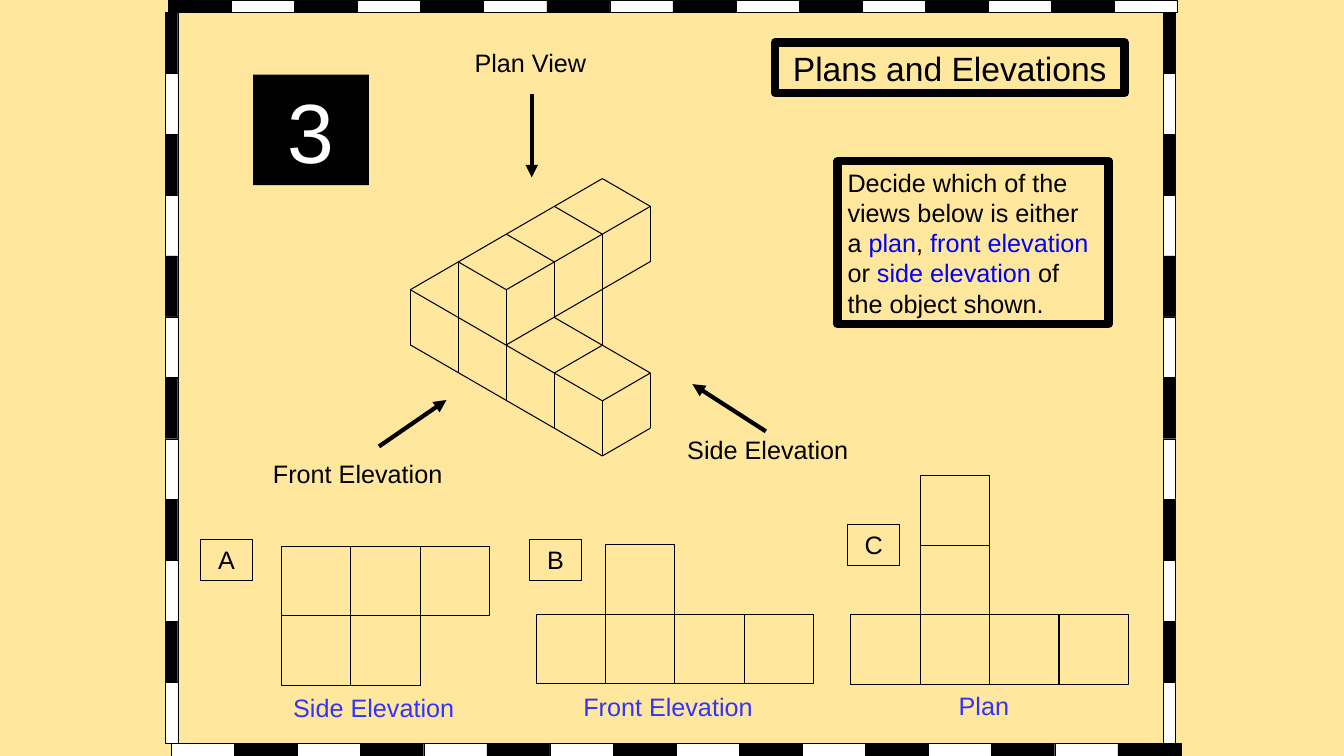
from lxml import etree
from pptx import Presentation
from pptx.dml.color import RGBColor
from pptx.enum.shapes import MSO_CONNECTOR, MSO_SHAPE
from pptx.enum.text import MSO_ANCHOR, MSO_AUTO_SIZE, PP_ALIGN
from pptx.oxml.ns import qn
from pptx.util import Cm, Pt

RECT = MSO_SHAPE.RECTANGLE
STRAIGHT = MSO_CONNECTOR.STRAIGHT
LEFT, CENTER = PP_ALIGN.LEFT, PP_ALIGN.CENTER
MIDDLE = MSO_ANCHOR.MIDDLE
FIXED = MSO_AUTO_SIZE.NONE

COLORS = {
    "sand": "FFE79E",
    "black": "000000",
    "white": "FFFFFF",
    "term": "0000FF",
    "answer": "3333FF",
}
CUBE = 1.75  # side of a square in the flat views

# Solid edges: (along front, along depth, down) at each end, in cubes
EDGES = [
    ((4, 0, 1), (4, 1, 1)), ((4, 0, 1), (0, 0, 1)), ((4, 0, 1), (4, 0, 0)),
    ((4, 0, 0), (4, 1, 0)), ((4, 0, 0), (0, 0, 0)), ((1, 1, 0), (2, 0, 1)),
    ((3, 0, 0), (3, 0, 1)), ((4, 1, 0), (2, 1, 0)), ((1, 1, 1), (1, 4, 1)),
    ((3, 0, 0), (3, 1, 0)), ((0, 1, 0), (1, 0, 1)), ((1, 1, 0), (1, 4, 0)),
    ((1, 1, 0), (0, 1, 0)), ((0, 1, 0), (0, 4, 0)), ((0, 2, 0), (1, 2, 0)),
    ((4, 1, 0), (4, 1, 1)), ((1, 2, 0), (1, 2, 1)), ((0, 3, 0), (1, 3, 0)),
    ((1, 3, 0), (3, 1, 0)), ((0, 4, 0), (1, 4, 0)), ((1, 4, 0), (1, 4, 1)),
    ((0, 0, 0), (0, 0, 1)), ((0, 0, 0), (0, 1, 0)),
]

# Flat views: left, top, (column, row) of each square
VIEWS = [
    (7.09, 13.77, [(0, 0), (1, 0), (2, 0), (0, 1), (1, 1)]),
    (13.51, 13.73, [(1, 0), (0, 1), (1, 1), (2, 1), (3, 1)]),
    (21.44, 11.99, [(1, 0), (1, 1), (0, 2), (1, 2), (2, 2), (3, 2)]),
]
TAGS = [("A", 5.05, 13.59), ("B", 13.34, 13.59), ("C", 21.36, 13.21)]
ANSWERS = [
    ("Side Elevation", 7.14, 17.32),
    ("Front Elevation", 14.45, 17.3),
    ("Plan", 23.91, 17.27),
]
POINTERS = [
    ("Front Elevation", 6.63, 11.43, (9.55, 11.25), (11.25, 10.08)),
    ("Side Elevation", 17.07, 10.82, (19.3, 10.87), (17.45, 9.68)),
    ("Plan View", 11.71, 1.07, (13.4, 2.36), (13.4, 4.47)),
]
TASK = [
    ("Decide which of the views below is either a ", "black"),
    ("plan", "term"),
    (", ", "black"),
    ("front elevation", "term"),
    (" or ", "black"),
    ("side elevation", "term"),
    (" of the object shown.", "black"),
]


def rgb(name):
    return RGBColor.from_string(COLORS[name])


def outline(shape, width):
    shape.line.color.rgb = rgb("black")
    shape.line.width = Pt(width)


def box(slide, x, y, w, h, fill=None, line=0.75):
    shape = slide.shapes.add_shape(RECT, Cm(x), Cm(y), Cm(w), Cm(h))
    shape.shadow.inherit = False
    if fill:
        shape.fill.solid()
        shape.fill.fore_color.rgb = rgb(fill)
    else:
        shape.fill.background()
    outline(shape, line)
    return shape


def write(shape, runs, size=18, align=LEFT):
    """Fill a shape with one paragraph of (text, colour) runs."""
    frame = shape.text_frame
    frame.word_wrap = True
    frame.auto_size = FIXED
    frame.vertical_anchor = MIDDLE
    para = frame.paragraphs[0]
    para.alignment = align
    para.font.name = "Arial"
    para.font.size = Pt(size)
    for text, color in runs:
        run = para.add_run()
        run.text = text
        run.font.color.rgb = rgb(color)


def label(slide, text, x, y, color="black"):
    shape = slide.shapes.add_textbox(Cm(x), Cm(y), Cm(5), Cm(1.02))
    write(shape, [(text, color)])


def line(slide, start, end, width=0.75, arrow=False):
    ends = [Cm(n) for n in (*start, *end)]
    link = slide.shapes.add_connector(STRAIGHT, *ends)
    outline(link, width)
    if arrow:
        etree.SubElement(link.line._ln, qn("a:tailEnd"), type="triangle")
    etree.SubElement(link._element.spPr, qn("a:effectLst"))


def project(point):
    """Isometric place of a cube corner on the slide."""
    front, depth, down = point
    return (10.34 + 1.21 * (front + depth),
            7.3 + 0.7 * (front - depth) + 1.39 * down)


def strip(slide, x, y, w, h, dx, dy, count, shades=("black", "white")):
    """Row or column of border blocks in alternating shades."""
    for i in range(count):
        box(slide, x + i * dx, y + i * dy, w, h, shades[i % 2], 0.25)


def border(slide):
    strip(slide, 4.24, 0, 1.59, 0.31, 1.59, 0, 16)
    strip(slide, 4.32, 18.74, 1.59, 0.31, 1.59, 0, 16, ("white", "black"))
    for x in (4.16, 29.31):
        strip(slide, x, 0.31, 0.32, 1.53, 0, 1.535, 12)


def main():
    deck = Presentation()
    deck.slide_width, deck.slide_height = Cm(33.87), Cm(19.05)
    slide = deck.slides.add_slide(deck.slide_layouts[5])
    back = slide.background.fill
    back.solid()
    back.fore_color.rgb = rgb("sand")

    title = slide.shapes.title
    title.left, title.top = Cm(19.53), Cm(1.07)
    title.width, title.height = Cm(8.81), Cm(1.27)
    outline(title, 6)
    write(title, [("Plans and Elevations", "black")], 24, CENTER)

    border(slide)
    number = box(slide, 6.38, 1.88, 2.92, 2.79, "black")
    number.line.fill.background()
    write(number, [("3", "white")], 60, CENTER)
    write(box(slide, 21.11, 4.06, 6.83, 4.11, line=6), TASK)

    for start, end in EDGES:
        line(slide, project(start), project(end))
    for text, x, y, start, end in POINTERS:
        label(slide, text, x, y)
        line(slide, start, end, 3, True)

    for x, y, cells in VIEWS:
        for col, row in cells:
            box(slide, x + col * CUBE, y + row * CUBE, CUBE, CUBE)
    for text, x, y in TAGS:
        write(box(slide, x, y, 1.32, 1.04), [(text, "black")], align=CENTER)
    for text, x, y in ANSWERS:
        label(slide, text, x, y, "answer")

    deck.save("out.pptx")


if __name__ == "__main__":
    main()
